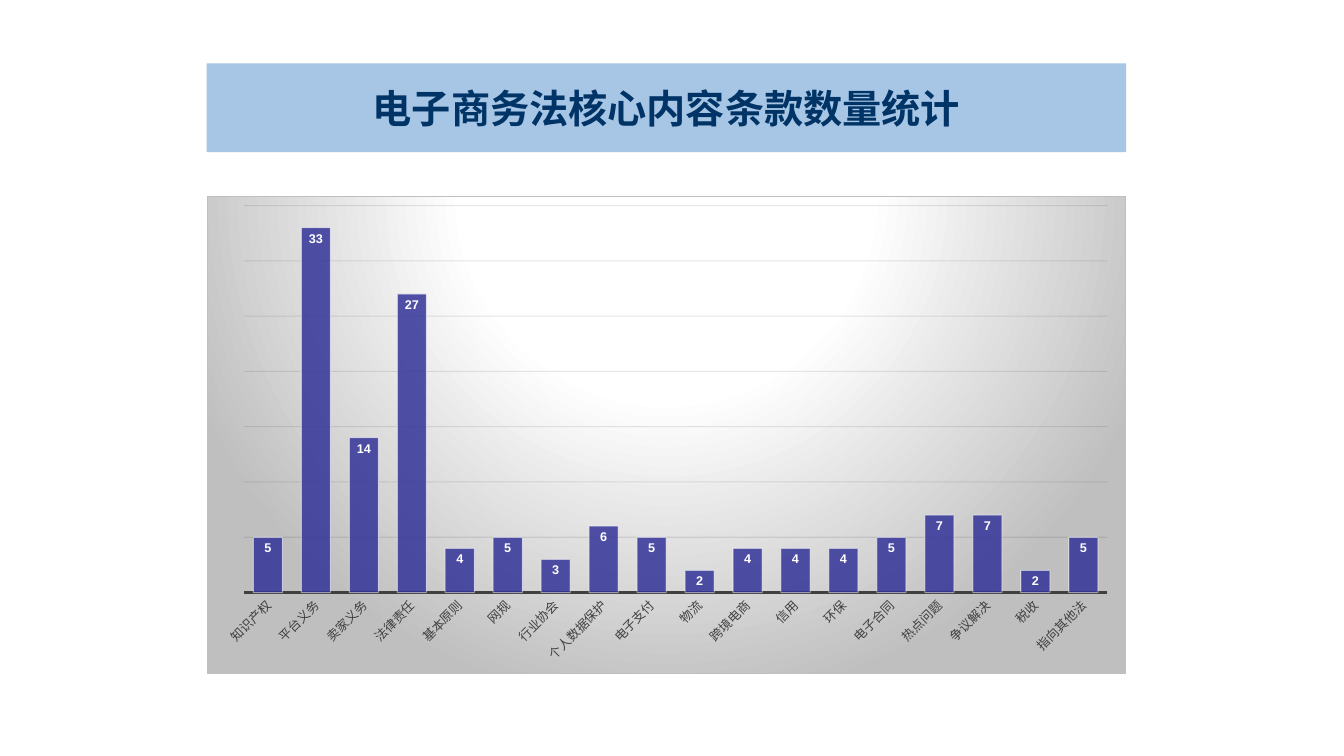
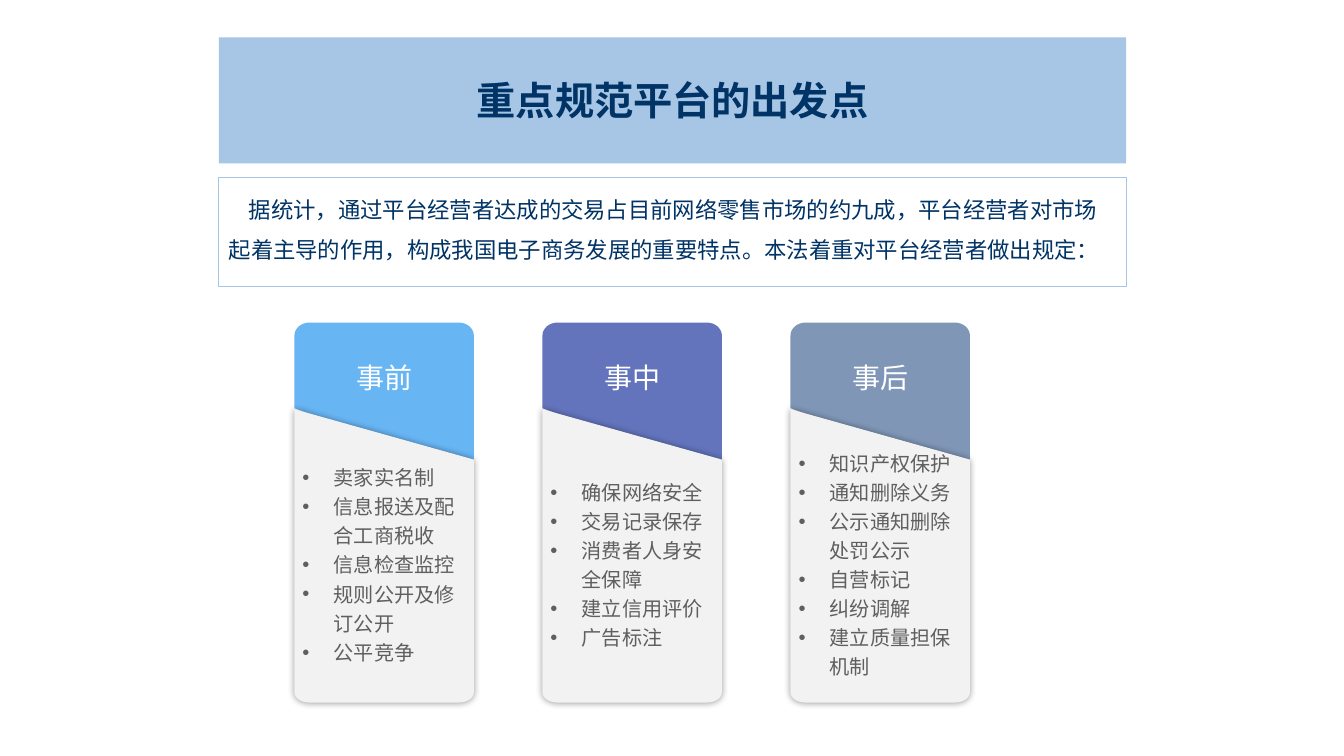
import math

from lxml import etree
from pptx import Presentation
from pptx import util as u
from pptx.chart.data import CategoryChartData
from pptx.dml.color import RGBColor
from pptx.enum import chart as ch, shapes, text
from pptx.oxml import parse_xml
from pptx.oxml.ns import nsdecls, qn

# Theme: colours, fonts and type sizes
THEME = {
    "band": "A7C6E5", "navy": "003366", "white": "FFFFFF", "card": "F2F2F2",
    "grey": "5F5F5F", "axis": "404040", "grid": "0D0D0D", "edge": "BFBFBF",
    "bar": "333399", "cjk": "Noto Sans CJK SC", "latin": "Arial",
    "title": 28, "intro": 16, "head": 20, "item": 14.4, "label": 9,
}

# Content
CHART_TITLE = "电子商务法核心内容条款数量统计"
CLAUSES = {
    "知识产权": 5, "平台义务": 33, "卖家义务": 14, "法律责任": 27,
    "基本原则": 4, "网规": 5, "行业协会": 3, "个人数据保护": 6,
    "电子支付": 5, "物流": 2, "跨境电商": 4, "信用": 4, "环保": 4,
    "电子合同": 5, "热点问题": 7, "争议解决": 7, "税收": 2, "指向其他法": 5,
}
CARDS_TITLE = "重点规范平台的出发点"
INTRO = ("据统计，通过平台经营者达成的交易占目前网络零售市场的约九成，"
         "平台经营者对市场起着主导的作用，构成我国电子商务发展的重要特点。"
         "本法着重对平台经营者做出规定：")
CARDS = [
    ("事前", "68B5F4", ["卖家实名制", "信息报送及配合工商税收", "信息检查监控",
                      "规则公开及修订公开", "公平竞争"]),
    ("事中", "6374BD", ["确保网络安全", "交易记录保存", "消费者人身安全保障",
                      "建立信用评价", "广告标注"]),
    ("事后", "7F96B7", ["知识产权保护", "通知删除义务", "公示通知删除处罚公示",
                      "自营标记", "纠纷调解", "建立质量担保机制"]),
]

# Card grid, in inches
CARD_LEFT, CARD_WIDTH, CARD_GAP = 2.92, 1.78, 0.68
CARD_TOP, CARD_BOTTOM = 3.2, 6.97
HEAD_CUT = (4.05, 4.71)
BODY_CUT = (4.06, 4.56)
CORNER_X, CORNER_TOP, CORNER_BOTTOM = 0.15, 0.13, 0.1


def rgb(name):
    return RGBColor.from_string(THEME.get(name, name))


def box(*inches):
    return [u.Inches(v) for v in inches]


def style(p, size, color, font="cjk", bold=False):
    for r in p.runs:
        r.font.size, r.font.bold = u.Pt(size), bold
        r.font.name = THEME[font]
        r.font.color.rgb = rgb(color)
        ea = etree.SubElement(r.font._element, qn("a:ea"))
        ea.set("typeface", THEME["cjk"])


def set_frame(tf, insets, anchor):
    tf.word_wrap, tf.auto_size = True, text.MSO_AUTO_SIZE.NONE
    tf.vertical_anchor = anchor
    (tf.margin_left, tf.margin_top,
     tf.margin_right, tf.margin_bottom) = box(*insets)


def set_alpha(fill_element, percent):
    for color in fill_element.iter(qn("a:srgbClr")):
        etree.SubElement(color, qn("a:alpha")).set("val", str(percent * 1000))


def titled_slide(prs, title, bounds):
    s = prs.slides.add_slide(prs.slide_layouts[5])
    sp = s.shapes.title
    sp.left, sp.top, sp.width, sp.height = box(*bounds)
    sp.fill.solid()
    sp.fill.fore_color.rgb = rgb("band")
    tf = sp.text_frame
    tf.text = title
    set_frame(tf, (0.1, 0.05, 0.1, 0.05), text.MSO_ANCHOR.MIDDLE)
    p = tf.paragraphs[0]
    p.alignment = text.PP_ALIGN.CENTER
    style(p, THEME["title"], "navy", bold=True)
    return s


# Chart
def format_background(chart):
    sp_pr = parse_xml(
        f'<c:spPr {nsdecls("c", "a")}><a:gradFill><a:gsLst>'
        f'<a:gs pos="0"><a:srgbClr val="{THEME["white"]}"/></a:gs>'
        f'<a:gs pos="39000"><a:srgbClr val="{THEME["white"]}"/></a:gs>'
        f'<a:gs pos="100000"><a:srgbClr val="{THEME["edge"]}"/></a:gs>'
        '</a:gsLst><a:path path="circle"><a:fillToRect l="50000" t="-80000" '
        'r="50000" b="180000"/></a:path></a:gradFill><a:ln w="9525">'
        f'<a:solidFill><a:srgbClr val="{THEME["edge"]}"/></a:solidFill>'
        '</a:ln></c:spPr>')
    chart._chartSpace.find(qn("c:chart")).addnext(sp_pr)


def format_plot_area(chart):
    area = chart._chartSpace.find(qn("c:chart")).find(qn("c:plotArea"))
    for old in area.findall(qn("c:layout")):
        area.remove(old)
    area.insert(0, parse_xml(
        f'<c:layout {nsdecls("c")}><c:manualLayout>'
        '<c:layoutTarget val="inner"/><c:xMode val="edge"/>'
        '<c:yMode val="edge"/><c:x val="0.04"/><c:y val="0.02"/>'
        '<c:w val="0.94"/><c:h val="0.81"/></c:manualLayout></c:layout>'))


def format_axes(chart):
    cat, val = chart.category_axis, chart.value_axis
    cat.major_tick_mark = cat.minor_tick_mark = ch.XL_TICK_MARK.NONE
    cat.has_major_gridlines = False
    cat.format.line.color.rgb = rgb("axis")
    cat.format.line.width = u.Pt(1.5)
    font = cat.tick_labels.font
    font.size, font.name = u.Pt(THEME["label"]), THEME["latin"]
    font.color.rgb = rgb("axis")
    body = cat._element.find(qn("c:txPr")).find(qn("a:bodyPr"))
    body.set("rot", str(-45 * 60000))
    val.visible = False
    val.minimum_scale, val.maximum_scale, val.major_unit = 0, 35, 5
    val.has_major_gridlines = True
    grid = val.major_gridlines.format.line
    grid.color.rgb, grid.width = rgb("grid"), u.Pt(0.75)
    set_alpha(val._element.find(qn("c:majorGridlines")), 10)


def format_bars(plot):
    plot.gap_width, plot.vary_by_categories = 65, False
    bars = plot.series[0]
    bars.format.fill.solid()
    bars.format.fill.fore_color.rgb = rgb("bar")
    line = bars.format.line
    line.color.rgb, line.width = rgb("white"), u.Pt(0.75)
    sp_pr = bars._element.find(qn("c:spPr"))
    set_alpha(sp_pr.find(qn("a:solidFill")), 85)
    set_alpha(sp_pr.find(qn("a:ln")), 50)
    labels = bars.data_labels
    labels.show_value = True
    labels.position = ch.XL_LABEL_POSITION.INSIDE_END
    font = labels.font
    font.size, font.bold, font.name = u.Pt(THEME["label"]), True, THEME["latin"]
    font.color.rgb = rgb("white")


def chart_slide(prs):
    s = titled_slide(prs, CHART_TITLE, (2.05, 0.63, 9.12, 0.88))
    data = CategoryChartData()
    data.categories = list(CLAUSES)
    data.add_series("Series 1", list(CLAUSES.values()))
    chart = s.shapes.add_chart(ch.XL_CHART_TYPE.COLUMN_CLUSTERED,
                               *box(2.05, 1.94, 9.12, 4.75), data).chart
    chart.has_title = chart.has_legend = False
    chart.font.size, chart.font.name = u.Pt(10), THEME["latin"]
    format_background(chart)
    format_plot_area(chart)
    format_axes(chart)
    format_bars(chart.plots[0])


# Cards
def corner(cx, cy, ry, start, steps=8):
    """Points of a quarter ellipse, clockwise from a start angle."""
    angles = [math.radians(start + 90 * i / steps) for i in range(steps + 1)]
    return [(cx + CORNER_X * math.cos(a), cy + ry * math.sin(a))
            for a in angles]


def outline(parent, points, color):
    emu = [(u.Inches(x), u.Inches(y)) for x, y in points]
    builder = parent.build_freeform(*emu[0], scale=1.0)
    builder.add_line_segments(emu[1:], close=True)
    sp = builder.convert_to_shape()
    sp.fill.solid()
    sp.fill.fore_color.rgb = rgb(color)
    sp.line.fill.background()
    sp.shadow.inherit = False
    return sp


def add_shadow(sp):
    effects = sp._element.spPr.find(qn("a:effectLst"))
    effects.append(parse_xml(
        f'<a:outerShdw {nsdecls("a")} blurRad="63500" dist="0" algn="ctr" '
        'rotWithShape="0"><a:srgbClr val="000000"><a:alpha val="40000"/>'
        '</a:srgbClr></a:outerShdw>'))


def add_bullet(p):
    p_pr = p._p.get_or_add_pPr()
    indent = u.Inches(0.31)
    p_pr.set("marL", str(indent))
    p_pr.set("indent", str(-indent))
    etree.SubElement(p_pr, qn("a:buFont")).set("typeface", THEME["latin"])
    etree.SubElement(p_pr, qn("a:buChar")).set("char", "•")


def add_card(s, left, heading, color, items):
    group = s.shapes.add_group_shape().shapes
    right = left + CARD_WIDTH
    inner_left, inner_right = left + CORNER_X, right - CORNER_X
    upper, lower = CARD_TOP + CORNER_TOP, CARD_BOTTOM - CORNER_BOTTOM

    head = outline(group, corner(inner_left, upper, CORNER_TOP, 180)
                   + corner(inner_right, upper, CORNER_TOP, 270)
                   + [(right, HEAD_CUT[1]), (left, HEAD_CUT[0])], color)
    tf = head.text_frame
    tf.text = heading
    set_frame(tf, (0.1, 0.05, 0.1, 0.47), text.MSO_ANCHOR.MIDDLE)
    tf.paragraphs[0].alignment = text.PP_ALIGN.CENTER
    style(tf.paragraphs[0], THEME["head"], "white", "latin")

    body = outline(group, [(left, BODY_CUT[0]), (right, BODY_CUT[1])]
                   + corner(inner_right, lower, CORNER_BOTTOM, 0)
                   + corner(inner_left, lower, CORNER_BOTTOM, 90), "card")
    add_shadow(body)
    tf = body.text_frame
    tf.text = "\n".join(items)
    set_frame(tf, (0.08, 0.18, 0.08, 0.05), text.MSO_ANCHOR.MIDDLE)
    for p in tf.paragraphs:
        p.alignment, p.line_spacing = text.PP_ALIGN.LEFT, 1.2
        add_bullet(p)
        style(p, THEME["item"], "grey", "latin")


def cards_slide(prs):
    s = titled_slide(prs, CARDS_TITLE, (2.17, 0.37, 9, 1.25))
    sp = s.shapes.add_shape(shapes.MSO_SHAPE.RECTANGLE,
                            *box(2.17, 1.76, 9, 1.08))
    sp.shadow.inherit = False
    sp.fill.background()
    sp.line.color.rgb, sp.line.width = rgb("band"), u.Pt(0.75)
    tf = sp.text_frame
    tf.text = INTRO
    set_frame(tf, (0.1, 0.05, 0.1, 0.05), text.MSO_ANCHOR.TOP)
    p = tf.paragraphs[0]
    p.alignment, p.line_spacing = text.PP_ALIGN.LEFT, 1.5
    p.space_before = u.Pt(6)
    p._p.get_or_add_pPr().set("indent", str(u.Inches(0.2)))
    style(p, THEME["intro"], "navy")
    for i, card in enumerate(CARDS):
        add_card(s, CARD_LEFT + i * (CARD_WIDTH + CARD_GAP), *card)


def main():
    prs = Presentation()
    prs.slide_width, prs.slide_height = box(13.33, 7.5)
    chart_slide(prs)
    cards_slide(prs)
    prs.save("out.pptx")


if __name__ == "__main__":
    main()
